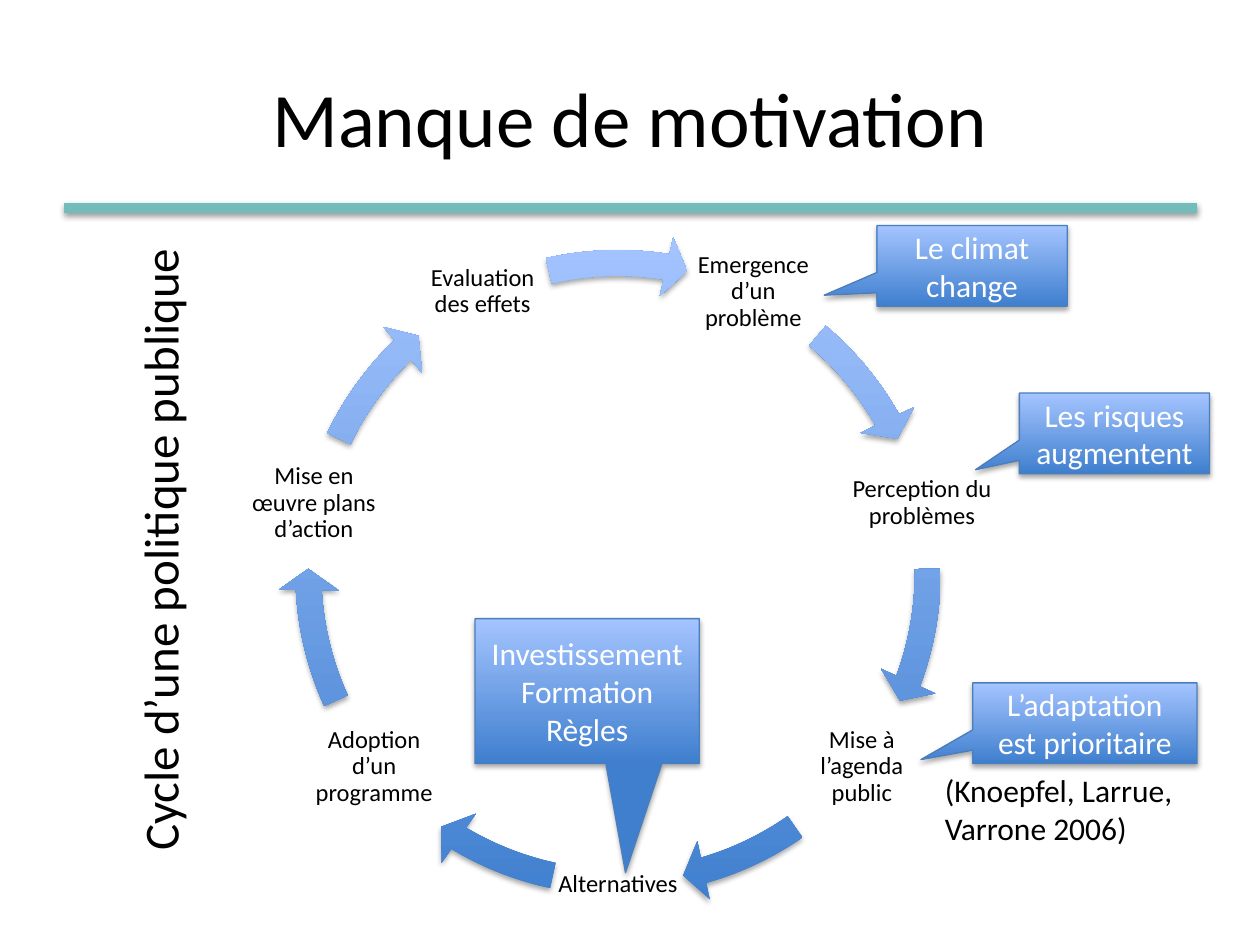
from math import cos, radians, sin

from lxml import etree
from pptx import Presentation
from pptx import util as u
from pptx.dml.color import RGBColor
from pptx.enum import shapes, text
from pptx.oxml.ns import qn

TITLE = "Manque de motivation"
SIDE_TITLE = "Cycle d’une politique publique"
CITATION = "(Knoepfel, Larrue, Varrone 2006)"

STAGES = [
    ("Emergence d’un problème", 1.04, 310.1, 330.44),
    ("Perception du problèmes", 1.41, 359.3, 20.49),
    ("Mise à l’agenda public", 1.04, 55.14, 73.95),
    ("Alternatives", 1.04, 102.14, 120.94),
    ("Adoption d’un programme", 1.04, 155.59, 176.79),
    ("Mise en œuvre plans d’action", 1.04, 205.65, 225.98),
    ("Evaluation des effets", 1.04, 257.08, 279.01),
]
CALLOUTS = [
    (["Le climat change"], (6.96, 1.79, 1.51, 0.64), (-0.777, 0.364)),
    (["Les risques augmentent"], (8.09, 3.12, 1.51, 0.64), (-0.731, 0.451)),
    (["L’adaptation est prioritaire"], (7.72, 5.42, 1.78, 0.64), (-0.731, 0.451)),
    (["Investissement", "Formation", "Règles"], (3.77, 4.91, 1.78, 1.15), (0.171, 1.253)),
]

THEME = {
    "font": "Calibri", "text": "000000", "inverse": "FFFFFF", "rule": "72BDB9",
    "dark": "3F7FCE", "light": "A4C4FF", "outline": "4B7EBC",
    "title": 44, "side": 28, "body": 18, "stage": 14,
}
CENTER_X, CENTER_Y = 4.905, 4.545
LABEL_RADIUS, LABEL_HEIGHT, RING_SIZE = 2.475, 1.04, 5.39


def color(name):
    return RGBColor.from_string(THEME[name])


def inches(box):
    return [u.Inches(value) for value in box]


def write(frame, lines, size, ink="text", align=text.PP_ALIGN.LEFT, spacing=None):
    frame.text = "\n".join(lines)
    for paragraph in frame.paragraphs:
        paragraph.alignment = align
        paragraph.line_spacing = spacing
        paragraph.font.name = THEME["font"]
        paragraph.font.size = u.Pt(THEME[size])
        paragraph.font.color.rgb = color(ink)


def add_text(parent, box, line, size, wrap=True, anchor=text.MSO_ANCHOR.TOP, inset=None, **style):
    label = parent.add_textbox(*inches(box))
    frame = label.text_frame
    frame.word_wrap = wrap
    frame.vertical_anchor = anchor
    if inset is not None:
        frame.margin_left = frame.margin_right = u.Inches(inset)
        frame.margin_top = frame.margin_bottom = u.Inches(inset)
    write(frame, [line], size, **style)
    return label


def cast_shadow(shape, distance, opacity):
    effects = etree.SubElement(shape._element.spPr, qn("a:effectLst"))
    shadow = etree.SubElement(
        effects, qn("a:outerShdw"), blurRad=str(u.Pt(3.1)), dist=str(u.Pt(distance)),
        dir="5400000", rotWithShape="0")
    black = etree.SubElement(shadow, qn("a:srgbClr"), val="000000")
    etree.SubElement(black, qn("a:alpha"), val=str(opacity * 1000))


def add_blue_shape(parent, kind, box, adjustments, outlined):
    shape = parent.add_shape(kind, *inches(box))
    for index, value in enumerate(adjustments):
        shape.adjustments[index] = value
    shape.fill.gradient()
    shape.fill.gradient_angle = 90
    for stop, name, position in zip(shape.fill.gradient_stops, ("dark", "light"), (0, 1)):
        stop.color.rgb = color(name)
        stop.position = position
    if outlined:
        shape.line.color.rgb = color("outline")
        shape.line.width = u.Pt(0.75)
    else:
        shape.line.fill.background()
    cast_shadow(shape, 1.8, 35)
    return shape


def add_cycle(slide):
    cycle = slide.shapes.add_group_shape().shapes
    step = 360 / len(STAGES)
    ring = (CENTER_X - RING_SIZE / 2, CENTER_Y - RING_SIZE / 2, RING_SIZE, RING_SIZE)
    for index, (stage, width, start, end) in enumerate(STAGES):
        angle = radians(-90 + step * (index + 0.5))
        left = CENTER_X + LABEL_RADIUS * cos(angle) - width / 2
        top = CENTER_Y + LABEL_RADIUS * sin(angle) - LABEL_HEIGHT / 2
        add_text(cycle, (left, top, width, LABEL_HEIGHT), stage, "stage", inset=0.02,
                 anchor=text.MSO_ANCHOR.MIDDLE, align=text.PP_ALIGN.CENTER, spacing=0.9)
        add_blue_shape(cycle, shapes.MSO_SHAPE.CIRCULAR_ARROW, ring,
                       (0.038, 2.35, end * 0.6, start * 0.6, 0.044), outlined=False)


def add_callouts(slide):
    for lines, box, pointer in CALLOUTS:
        callout = add_blue_shape(slide.shapes, shapes.MSO_SHAPE.RECTANGULAR_CALLOUT,
                                 box, pointer, outlined=True)
        callout.text_frame.word_wrap = True
        callout.text_frame.vertical_anchor = text.MSO_ANCHOR.MIDDLE
        write(callout.text_frame, lines, "body", "inverse", text.PP_ALIGN.CENTER)


def main():
    deck = Presentation()
    deck.slide_width, deck.slide_height = u.Inches(10), u.Inches(7.5)
    slide = deck.slides.add_slide(deck.slide_layouts[6])

    rule = slide.shapes.add_connector(
        shapes.MSO_CONNECTOR.STRAIGHT, *inches((0.51, 1.65, 9.5, 1.65)))
    rule.line.color.rgb = color("rule")
    rule.line.width = u.Pt(6)
    cast_shadow(rule, 1.6, 38)

    add_text(slide.shapes, (0.5, 0.3, 9, 1.25), TITLE, "title",
             anchor=text.MSO_ANCHOR.MIDDLE, align=text.PP_ALIGN.CENTER)
    add_cycle(slide)
    add_text(slide.shapes, (7.4, 6.07, 2.38, 0.71), CITATION, "body")
    add_callouts(slide)
    side_title = add_text(slide.shapes, (-1.26, 4.04, 5.05, 0.57), SIDE_TITLE, "side", wrap=False)
    side_title.rotation = 270

    deck.save("out.pptx")


if __name__ == "__main__":
    main()
